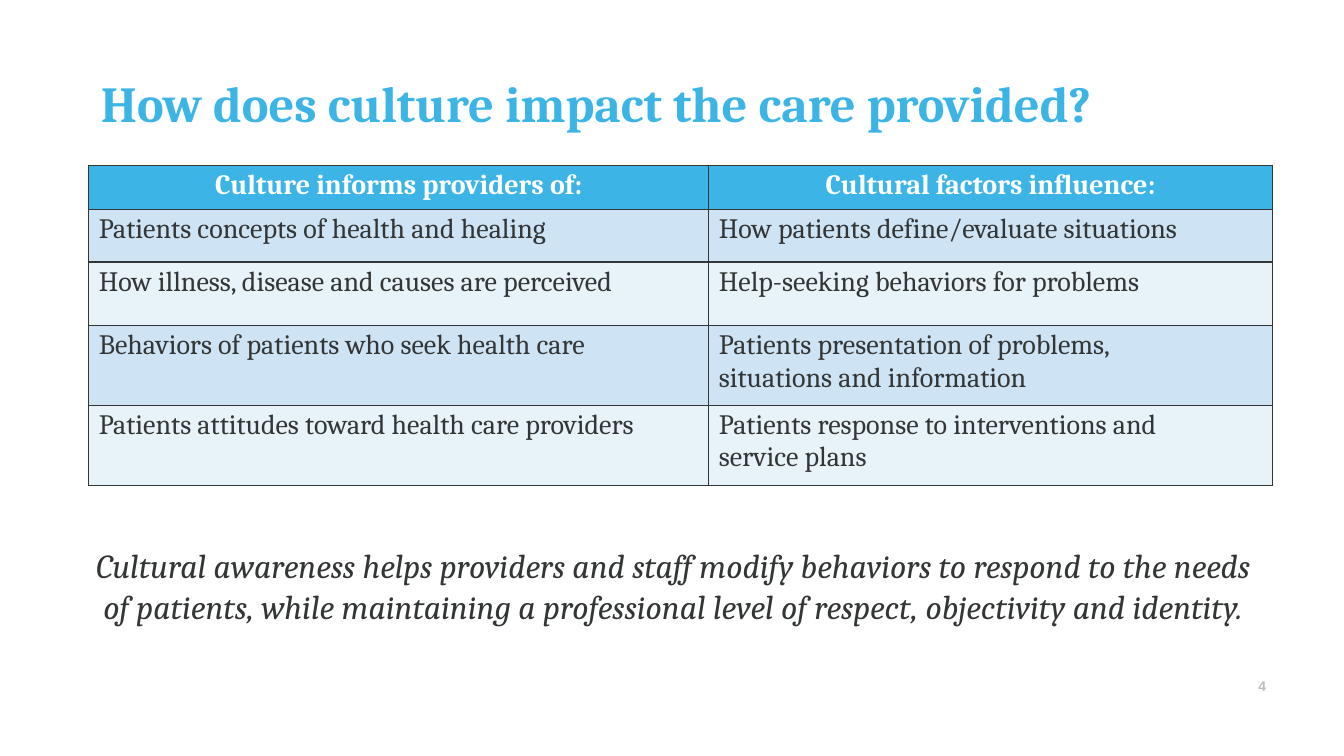
from lxml import etree
from pptx import Presentation
from pptx import util as u
from pptx.dml.color import RGBColor
from pptx.enum import text
from pptx.oxml import ns

BLUE, INK, WHITE, GREY = "3CB5E6", "333637", "FFFFFF", "BEBEBE"
BANDS = ["CEE4F5", "E8F3F9"]


def colour(value):
    return RGBColor.from_string(value)


class Deck:
    serif = "Cambria"
    sans = "Arial"
    grid = 100

    def __init__(self):
        self.prs = Presentation()
        self.prs.slide_width = u.Inches(13.33)
        self.prs.slide_height = u.Inches(7.5)
        self.slide = self.prs.slides.add_slide(self.prs.slide_layouts[5])

    def x(self, columns):
        return int(self.prs.slide_width * columns / self.grid)

    def y(self, rows):
        return int(self.prs.slide_height * rows / self.grid)

    def box(self, left, top, width, height):
        return self.x(left), self.y(top), self.x(width), self.y(height)

    def wording(self, frame, lines, ink, align=text.PP_ALIGN.LEFT, **font):
        formats = {"name": self.serif, "bold": False, "italic": False, **font}
        for index, line in enumerate(lines):
            para = frame.paragraphs[0] if index == 0 else frame.add_paragraph()
            para.alignment = align
            run = para.add_run()
            run.text = line
            for key, value in formats.items():
                setattr(run.font, key, value)
            run.font.color.rgb = colour(ink)

    def frame(self, shape, line, ink, **font):
        settings = {
            "margin_left": u.Inches(0.01), "margin_right": 0,
            "margin_top": u.Inches(0.02), "margin_bottom": 0,
            "word_wrap": True, "auto_size": text.MSO_AUTO_SIZE.NONE,
            "vertical_anchor": text.MSO_ANCHOR.TOP,
        }
        for key, value in settings.items():
            setattr(shape.text_frame, key, value)
        self.wording(shape.text_frame, [line], ink, **font)

    def title(self, line, place):
        heading = self.slide.shapes.title
        heading.left, heading.top, heading.width, heading.height = self.box(*place)
        self.frame(heading, line, BLUE, size=u.Pt(36), bold=True)

    def label(self, line, place, ink, **font):
        self.frame(self.slide.shapes.add_textbox(*self.box(*place)), line, ink, **font)

    def border(self, cell):
        props = cell._tc.get_or_add_tcPr()
        for side in ("a:lnL", "a:lnR", "a:lnT", "a:lnB"):
            line = etree.SubElement(props, ns.qn(side), w=str(int(u.Pt(1))))
            fill = etree.SubElement(line, ns.qn("a:solidFill"))
            etree.SubElement(fill, ns.qn("a:srgbClr"), val=INK)

    def cell(self, cell, content, fill, ink, right=0.1, **font):
        margins = {"left": 0.1, "right": right, "top": 0.04, "bottom": 0}
        for side, inches in margins.items():
            setattr(cell, f"margin_{side}", u.Inches(inches))
        self.border(cell)
        cell.fill.solid()
        cell.fill.fore_color.rgb = colour(fill)
        self.wording(cell.text_frame, content.split("\n"), ink, size=u.Pt(20), **font)

    def table(self, rows, left, top, widths, heights):
        place = self.box(left, top, sum(widths), sum(heights))
        table = self.slide.shapes.add_table(len(rows), len(widths), *place).table
        for column, width in zip(table.columns, widths):
            column.width = self.x(width)
        for row, height in zip(table.rows, heights):
            row.height = self.y(height)
        for r, row in enumerate(rows):
            for c, content in enumerate(row):
                if r == 0:
                    self.cell(table.cell(r, c), content, BLUE, WHITE,
                              align=text.PP_ALIGN.CENTER, bold=True)
                else:
                    self.cell(table.cell(r, c), content, BANDS[(r - 1) % 2], INK,
                              right=0.7 if c else 0.1)


def main():
    deck = Deck()
    deck.title("How does culture impact the care provided?", (7.43, 9.33, 85.15, 8.4))
    deck.label("4", (93.55, 89.33, 1.65, 2.4), GREY,
               name=deck.sans, size=u.Pt(10), bold=True)
    culture_and_care = [
        ("Culture informs providers of:", "Cultural factors influence:"),
        ("Patients concepts of health and healing",
         "How patients define/evaluate situations"),
        ("How illness, disease and causes are perceived",
         "Help-seeking behaviors for problems"),
        ("Behaviors of patients who seek health care",
         "Patients presentation of problems, situations and information"),
        ("Patients attitudes toward health care providers",
         "Patients response to interventions and\nservice plans"),
    ]
    deck.table(culture_and_care, 6.6, 21.87, [46.14, 41.94],
               [5.87, 6.93, 8.4, 10.53, 10.67])
    deck.label("Cultural awareness helps providers and staff modify behaviors to respond "
               "to the needs of patients, while maintaining a professional level of "
               "respect, objectivity and identity.",
               (6.9, 71.87, 86.27, 16.4), INK,
               align=text.PP_ALIGN.CENTER, size=u.Pt(24), italic=True)
    deck.prs.save("out.pptx")


if __name__ == "__main__":
    main()
